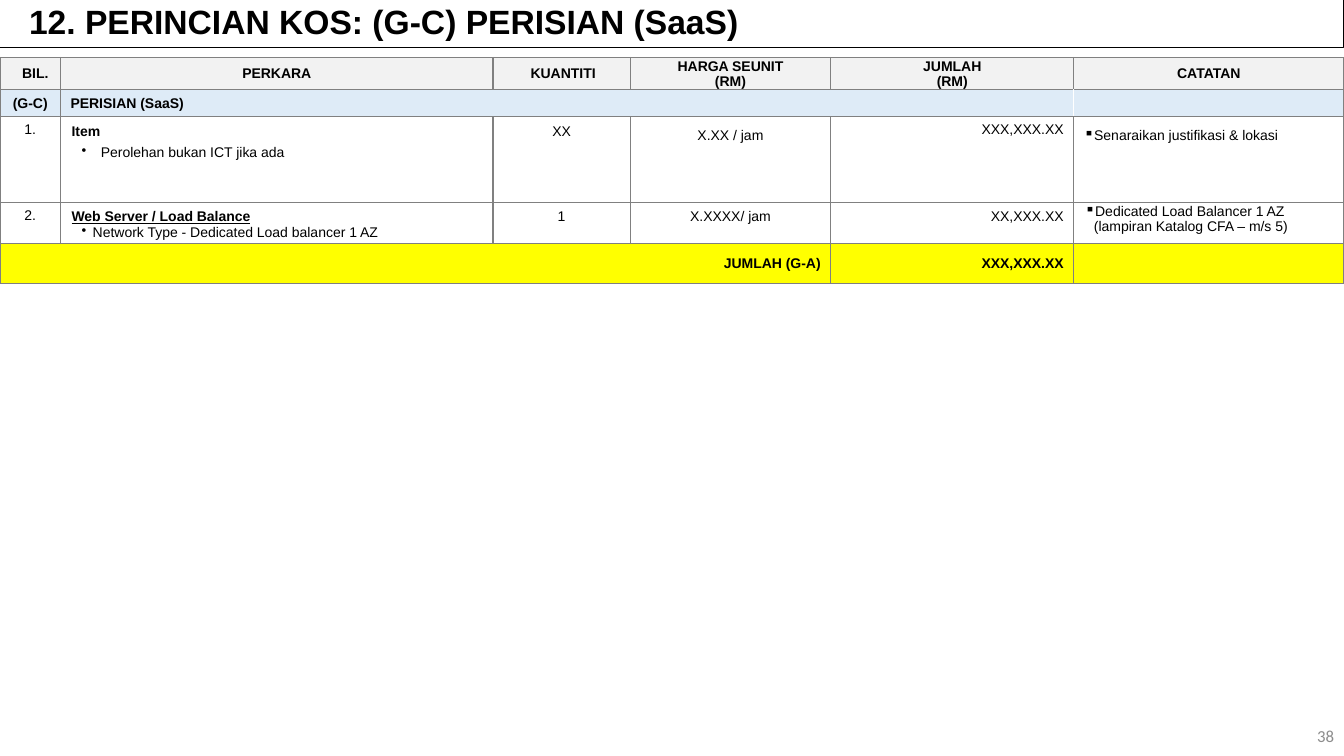
from copy import deepcopy

from lxml import etree
from pptx import Presentation
from pptx import util as u
from pptx.dml.color import RGBColor
from pptx.enum import shapes, text
from pptx.oxml import ns

BLACK = RGBColor(0x00, 0x00, 0x00)
WHITE = RGBColor(0xFF, 0xFF, 0xFF)
HEADER_GREY = RGBColor(0xF2, 0xF2, 0xF2)
SECTION_BLUE = RGBColor(0xDE, 0xEB, 0xF7)
TOTAL_YELLOW = RGBColor(0xFF, 0xFF, 0x00)
BORDER_GREY = RGBColor(0x80, 0x80, 0x80)
PAGE_GREY = RGBColor(0x8C, 0x8C, 0x8C)

LEFT, CENTER, RIGHT = text.PP_ALIGN.LEFT, text.PP_ALIGN.CENTER, text.PP_ALIGN.RIGHT
TOP, MIDDLE = text.MSO_ANCHOR.TOP, text.MSO_ANCHOR.MIDDLE

COLUMN_WIDTHS = [0.6, 4.29, 1.36, 1.99, 2.41, 2.68]
ROW_HEIGHTS = [0.32, 0.26, 0.85, 0.41, 0.39]
ROW_FILLS = [HEADER_GREY, SECTION_BLUE, WHITE, WHITE, TOTAL_YELLOW]
ROW_ANCHORS = [MIDDLE, MIDDLE, TOP, TOP, MIDDLE]
MERGES = [(1, 1, 4), (4, 0, 3)]
OPEN_EDGES = {(1, 4): "R", (1, 5): "L"}

NO_INSET = (0, 0, 0, 0)
THIN_INSET = (0.01, 0.01, 0.01, 0)
CELL_INSET = (0.1, 0.05, 0.1, 0.05)
AMOUNT_INSET = (0.01, 0.01, 0.1, 0)
EXACT = u.Pt(15.1)


def line(wording, align=LEFT, indent=(0, 0), spacing=None, bullet=None, **font):
    """Describe one paragraph of a cell or box."""
    return dict(wording=wording, align=align, indent=indent, spacing=spacing,
                bullet=bullet, font=font)


def heading(*wordings, inset=THIN_INSET, indent=0):
    """Describe a header cell with centred bold lines."""
    return inset, [line(w, CENTER, (indent, 0), bold=True) for w in wordings]


def entry(wording, align, inset=CELL_INSET, **details):
    """Describe a cell holding a single paragraph."""
    return inset, [line(wording, align, **details)]


COST_CELLS = {
    (0, 0): heading("BIL.", inset=NO_INSET, indent=0.1),
    (0, 1): heading("PERKARA", inset=NO_INSET),
    (0, 2): heading("KUANTITI", inset=NO_INSET, indent=0.03),
    (0, 3): heading("HARGA SEUNIT", "(RM)"),
    (0, 4): heading("JUMLAH", "(RM)"),
    (0, 5): heading("CATATAN"),
    (1, 0): heading("(G-C)", inset=CELL_INSET),
    (1, 1): entry("PERISIAN (SaaS)", LEFT, bold=True),
    (2, 0): entry("1.", CENTER),
    (2, 1): (THIN_INSET, [
        line("Item", indent=(0.1, 0), spacing=EXACT, bold=True),
        line("Perolehan bukan ICT jika ada", indent=(0.39, -0.19), spacing=EXACT, bullet="•")]),
    (2, 2): entry("XX", CENTER, THIN_INSET, spacing=EXACT),
    (2, 3): entry("X.XX / jam", CENTER, spacing=EXACT),
    (2, 4): entry("XXX,XXX.XX", RIGHT),
    (2, 5): entry("Senaraikan justifikasi & lokasi", LEFT, indent=(0.1, -0.1),
                  spacing=EXACT, bullet="▪"),
    (3, 0): entry("2.", CENTER),
    (3, 1): (THIN_INSET, [
        line("Web Server / Load Balance", indent=(0.1, 0), spacing=EXACT,
             bold=True, underline=True),
        line("Network Type - Dedicated Load balancer 1 AZ", indent=(0.31, -0.11), bullet="•")]),
    (3, 2): entry("1", CENTER, THIN_INSET, spacing=EXACT),
    (3, 3): entry("X.XXXX/ jam", CENTER, THIN_INSET, spacing=EXACT),
    (3, 4): entry("XX,XXX.XX", RIGHT, AMOUNT_INSET, spacing=EXACT),
    (3, 5): entry("Dedicated Load Balancer 1 AZ\v(lampiran Katalog CFA – m/s 5)", LEFT,
                  THIN_INSET, indent=(0.19, -0.09), bullet="▪"),
    (4, 0): entry("JUMLAH (G-A)", RIGHT, bold=True),
    (4, 4): entry("XXX,XXX.XX", RIGHT, bold=True),
}


def write(frame, lines, size=10, name="Arial", color=BLACK):
    """Fill a text frame with described paragraphs."""
    for number, item in enumerate(lines):
        paragraph = frame.add_paragraph() if number else frame.paragraphs[0]
        paragraph.text = item["wording"]
        paragraph.alignment = item["align"]
        paragraph.line_spacing = item["spacing"]
        properties = paragraph._p.get_or_add_pPr()
        for key, inches in zip(("marL", "indent"), item["indent"]):
            properties.set(key, str(u.Inches(inches)))
        if item["bullet"]:
            etree.SubElement(properties, ns.qn("a:buChar"), char=item["bullet"])
        style = {"size": u.Pt(size), "name": name, "bold": False, **item["font"]}
        for run in paragraph.runs:
            for key, value in style.items():
                setattr(run.font, key, value)
            run.font.color.rgb = color
        for line_break in paragraph._p.findall(ns.qn("a:br")):
            line_break.append(deepcopy(paragraph.runs[0].font._element))


def draw_borders(cell, open_edge):
    """Outline a cell on every side but the open one."""
    properties = cell._tc.get_or_add_tcPr()
    sides = [side for side in "LRTB" if side != open_edge]
    for position, side in enumerate(sides):
        border = etree.Element(ns.qn(f"a:ln{side}"), w=str(u.Pt(1)))
        fill = etree.SubElement(border, ns.qn("a:solidFill"))
        etree.SubElement(fill, ns.qn("a:srgbClr"), val=str(BORDER_GREY))
        properties.insert(position, border)


def add_title(slide, left, top, width, height):
    """Place the outlined title bar."""
    title = slide.shapes.add_shape(shapes.MSO_SHAPE.RECTANGLE, left, top, width, height)
    title.shadow.inherit = False
    title.fill.background()
    title.line.color.rgb = BLACK
    title.line.width = u.Pt(0.75)
    title.text_frame.vertical_anchor = MIDDLE
    write(title.text_frame, [line("12. PERINCIAN KOS: (G-C) PERISIAN (SaaS)",
                                  indent=(0.19, 0), spacing=0.9, bold=True)], 24)


def add_cost_table(slide, left, top, width, height):
    """Place the software cost table."""
    costs = slide.shapes.add_table(len(ROW_HEIGHTS), len(COLUMN_WIDTHS),
                                   left, top, width, height).table
    costs.first_row = costs.horz_banding = False
    for column, inches in zip(costs.columns, COLUMN_WIDTHS):
        column.width = u.Inches(inches)
    for r, inches in enumerate(ROW_HEIGHTS):
        costs.rows[r].height = u.Inches(inches)
        for c in range(len(COLUMN_WIDTHS)):
            cell = costs.cell(r, c)
            inset, lines = COST_CELLS.get((r, c), (CELL_INSET, []))
            for side, margin in zip(("left", "top", "right", "bottom"), inset):
                setattr(cell, f"margin_{side}", u.Inches(margin))
            cell.vertical_anchor = ROW_ANCHORS[r]
            cell.fill.solid()
            cell.fill.fore_color.rgb = ROW_FILLS[r]
            draw_borders(cell, OPEN_EDGES.get((r, c)))
            write(cell.text_frame, lines)
            if not lines:
                etree.SubElement(cell.text_frame.paragraphs[0]._p,
                                 ns.qn("a:endParaRPr"), sz="1000")
    for r, first, last in MERGES:
        costs.cell(r, first).merge(costs.cell(r, last))


def add_page_number(slide, left, top, width, height):
    """Place the page number in its corner."""
    frame = slide.shapes.add_textbox(left, top, width, height).text_frame
    frame.word_wrap = True
    frame.vertical_anchor = MIDDLE
    write(frame, [line("38", RIGHT)], 12, "Calibri", PAGE_GREY)


def main():
    """Build and save the cost slide."""
    deck = Presentation()
    deck.slide_width, deck.slide_height = u.Inches(13.33), u.Inches(7.5)
    slide = deck.slides.add_slide(deck.slide_layouts[6])
    width = deck.slide_width
    add_title(slide, 0, 0, width, u.Inches(0.47))
    add_cost_table(slide, 0, u.Inches(0.57), width, u.Inches(sum(ROW_HEIGHTS)))
    add_page_number(slide, width - u.Inches(3), u.Inches(7.1), u.Inches(3), u.Inches(0.4))
    deck.save("out.pptx")


if __name__ == "__main__":
    main()
